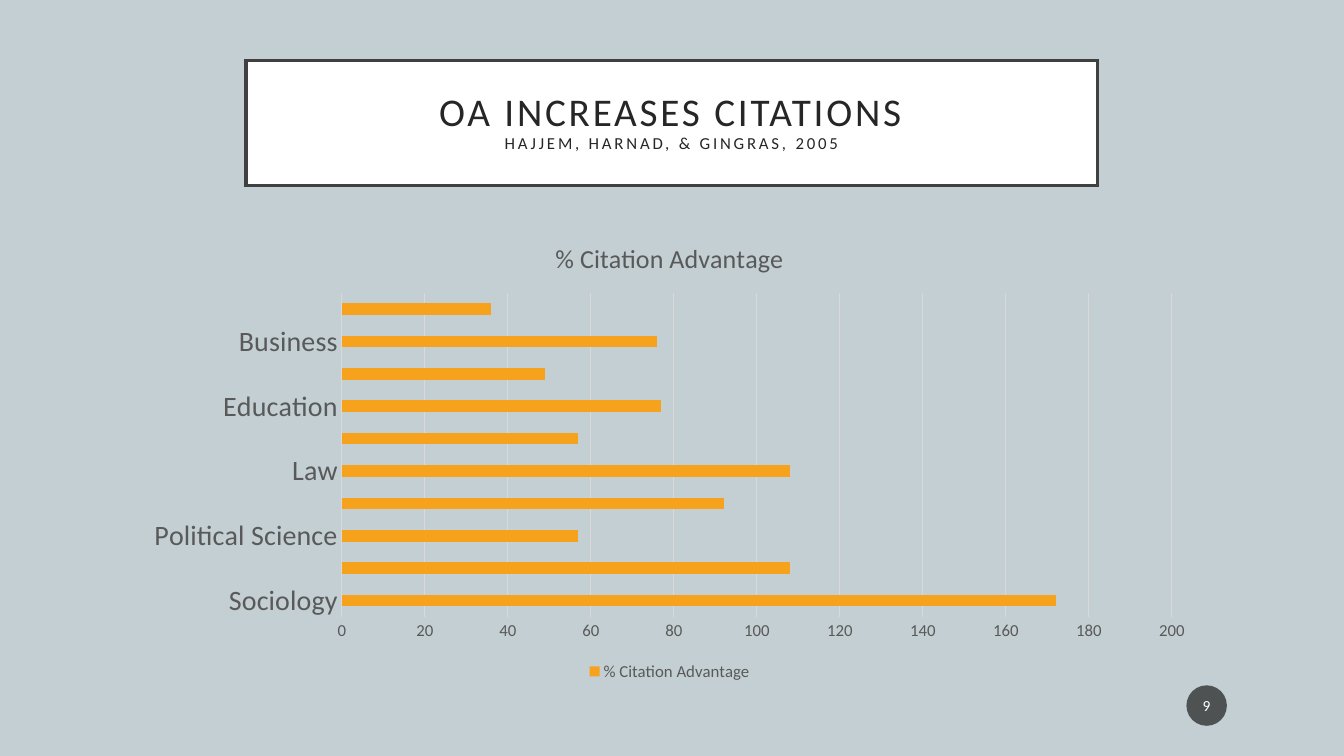
from lxml import etree
from pptx import Presentation
from pptx.chart.data import CategoryChartData
from pptx.dml.color import RGBColor
from pptx.enum.chart import XL_CHART_TYPE, XL_LEGEND_POSITION, XL_TICK_MARK
from pptx.enum.shapes import MSO_SHAPE
from pptx.enum.text import MSO_ANCHOR, PP_ALIGN
from pptx.oxml.ns import qn
from pptx.util import Cm, Pt

BAR = XL_CHART_TYPE.BAR_CLUSTERED
BOTTOM = XL_LEGEND_POSITION.BOTTOM
NO_TICK = XL_TICK_MARK.NONE
RECT, OVAL = MSO_SHAPE.RECTANGLE, MSO_SHAPE.OVAL
MIDDLE, CENTER = MSO_ANCHOR.MIDDLE, PP_ALIGN.CENTER


def rgb(value):
    return RGBColor.from_string(value)


def style(font, size, color):
    font.name = "Calibri"
    font.size = Pt(size)
    font.bold = False
    font.color.rgb = rgb(color)


prs = Presentation()
prs.slide_width, prs.slide_height = Cm(33.87), Cm(19.05)
s = prs.slides.add_slide(prs.slide_layouts[6])
s.background.fill.solid()
s.background.fill.fore_color.rgb = rgb("C3CFD3")

title = s.shapes.add_shape(RECT, Cm(6.2), Cm(1.52), Cm(21.46), Cm(3.15))
title.shadow.inherit = False
title.fill.solid()
title.fill.fore_color.rgb = rgb("FFFFFF")
title.line.color.rgb = rgb("404040")
title.line.width = Pt(2.5)
etree.SubElement(title.line._ln, qn("a:miter"), lim="800000")
tf = title.text_frame
tf.word_wrap = True
tf.vertical_anchor = MIDDLE
tf.margin_left = tf.margin_right = tf.margin_top = tf.margin_bottom = Cm(0.5)
p = tf.paragraphs[0]
p.alignment = CENTER
p.line_spacing = 0.9
for text, size in [("OA INCREASES CITATIONS", 28), ("HAJJEM, HARNAD, & GINGRAS, 2005", 12)]:
    if p.runs:
        p.add_line_break()
    r = p.add_run()
    r.text = text
    style(r.font, size, "262626")
    r.font._element.set("spc", "200")

fields = ["Sociology", "", "Political Science", "", "Law", "", "Education", "", "Business", ""]
advantages = [172, 108, 57, 92, 108, 57, 77, 49, 76, 36]
data = CategoryChartData()
data.categories = fields
data.add_series("% Citation Advantage", advantages)
chart = s.shapes.add_chart(BAR, Cm(3.35), Cm(5.56), Cm(27.05), Cm(11.71), data).chart
style(chart.font, 10, "000000")

chart.has_title = True
r = chart.chart_title.text_frame.paragraphs[0].add_run()
r.text = "% Citation Advantage"
style(r.font, 18.6, "595959")

chart.has_legend = True
chart.legend.position = BOTTOM
chart.legend.include_in_layout = False
style(chart.legend.font, 12, "595959")

for axis, size in [(chart.category_axis, 20), (chart.value_axis, 12)]:
    axis.major_tick_mark = axis.minor_tick_mark = NO_TICK
    style(axis.tick_labels.font, size, "595959")
chart.value_axis.format.line.fill.background()
chart.value_axis.has_major_gridlines = True
for line in [chart.category_axis.format.line, chart.value_axis.major_gridlines.format.line]:
    line.color.rgb = rgb("D9D9D9")
    line.width = Pt(0.75)

plot = chart.plots[0]
plot.gap_width = 182
plot.vary_by_categories = False
bars = plot.series[0].format.fill
bars.solid()
bars.fore_color.rgb = rgb("F6A21D")

badge = s.shapes.add_shape(OVAL, Cm(29.9), Cm(17.27), Cm(1.02), Cm(1.02))
badge.shadow.inherit = False
badge.fill.solid()
badge.fill.fore_color.rgb = rgb("1D1D1D")
color = badge._element.spPr.find(qn("a:solidFill"))[0]
etree.SubElement(color, qn("a:alpha"), val="70000")
badge.line.fill.background()
tf = badge.text_frame
tf.vertical_anchor = MIDDLE
tf.margin_left = tf.margin_right = Cm(0.05)
tf.margin_top = tf.margin_bottom = Cm(0.13)
p = tf.paragraphs[0]
p.alignment = CENTER
r = p.add_run()
r.text = "9"
style(r.font, 11, "FFFFFF")

prs.save("out.pptx")
